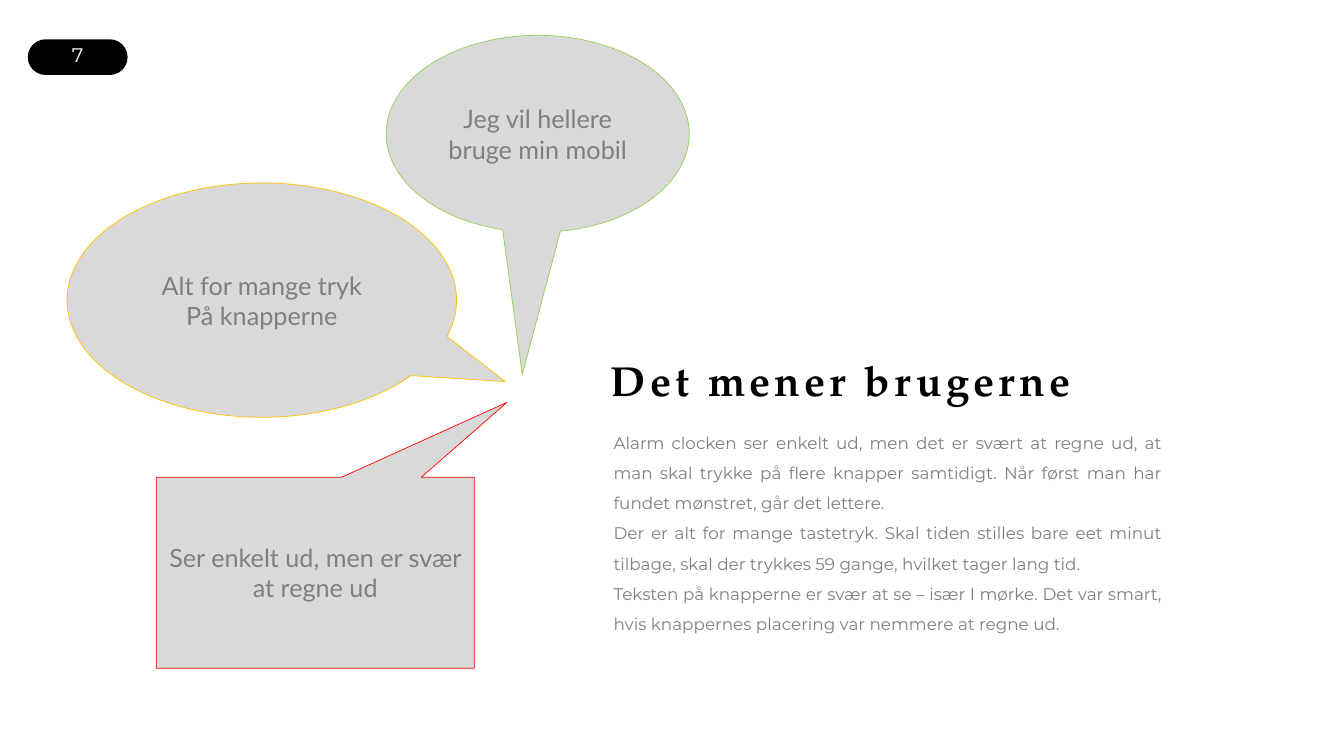
from pptx import Presentation
from pptx.dml.color import RGBColor
from pptx.enum.shapes import MSO_SHAPE as Preset
from pptx.enum.text import MSO_ANCHOR as Anchor, MSO_AUTO_SIZE as AutoSize, PP_ALIGN as Align
from pptx.oxml.ns import qn
from pptx.util import Cm, Pt

BLACK = RGBColor(0x00, 0x00, 0x00)
WHITE = RGBColor(0xFF, 0xFF, 0xFF)
GREY_TEXT = RGBColor(0x7F, 0x7F, 0x7F)
GREY_FILL = RGBColor(0xD9, 0xD9, 0xD9)
AMBER = RGBColor(0xFF, 0xC0, 0x00)
RED = RGBColor(0xFF, 0x00, 0x00)
GREEN = RGBColor(0x92, 0xD0, 0x50)

HEADING_FONT = "TeX Gyre Pagella"
BODY_FONT = "Montserrat"
CALLOUT_FONT = "Lato"

TITLE = "Det mener brugerne"
BODY = [
    "Alarm clocken ser enkelt ud, men det er svært at regne ud, at man skal trykke på "
    "flere knapper samtidigt. Når først man har fundet mønstret, går det lettere.",
    "Der er alt for mange tastetryk. Skal tiden stilles bare eet minut tilbage, skal der "
    "trykkes 59 gange, hvilket tager lang tid.",
    "Teksten på knapperne er svær at se – især I mørke. Det var smart, hvis knappernes "
    "placering var nemmere at regne ud.",
]
CALLOUTS = [
    (Preset.OVAL_CALLOUT, (3.38, 9.22, 19.63, 11.81), (0.625, 0.348), AMBER,
     ["Alt for mange tryk", "På knapperne"]),
    (Preset.RECTANGULAR_CALLOUT, (7.87, 24.05, 16.03, 9.63), (0.603, -0.892), RED,
     ["Ser enkelt ud, men er svær at regne ud"]),
    (Preset.OVAL_CALLOUT, (19.46, 1.78, 15.27, 9.93), (-0.051, 1.222), GREEN,
     ["Jeg vil hellere bruge min mobil"]),
]


def place(shape, left, top, width, height):
    shape.left, shape.top = Cm(left), Cm(top)
    shape.width, shape.height = Cm(width), Cm(height)


def write(frame, texts, font, size, color, align, bold=False):
    runs = []
    for index, text in enumerate(texts):
        paragraph = frame.add_paragraph() if index else frame.paragraphs[0]
        paragraph.alignment = align
        run = paragraph.add_run()
        run.text = text
        run.font.name = font
        run.font.size = Pt(size)
        run.font.bold = bold
        run.font.color.rgb = color
        runs.append(run)
    return runs


def add_page_number(slide, box, number):
    left, top, width, height = box
    pill = slide.shapes.add_shape(Preset.ROUNDED_RECTANGLE, *map(Cm, box))
    pill.adjustments[0] = 0.5
    pill.shadow.inherit = False
    pill.fill.solid()
    pill.fill.fore_color.rgb = BLACK
    pill.line.fill.background()
    label_width = 2.84
    label = slide.shapes.add_textbox(
        Cm(left + (width - label_width) / 2), Cm(top - 0.05), Cm(label_width), Cm(height - 0.1))
    frame = label.text_frame
    frame.word_wrap = False
    frame.margin_left = frame.margin_right = Cm(0.5)
    frame.margin_top = frame.margin_bottom = Cm(0.25)
    write(frame, [number], BODY_FONT, 28, WHITE, Align.CENTER)


def add_article(slide, box):
    left, top, width, height = box
    title, body = slide.shapes.title, slide.placeholders[1]
    place(title, left, top, width, 2.82)
    place(body, left + 0.13, top + 3.43, width - 1.29, height - 3.43)
    for placeholder in (title, body):
        placeholder.text_frame.word_wrap = True
        placeholder.text_frame.auto_size = AutoSize.SHAPE_TO_FIT_TEXT
        placeholder.text_frame.vertical_anchor = Anchor.TOP
    heading = write(title.text_frame, [TITLE], HEADING_FONT, 60, BLACK, Align.LEFT, bold=True)[0]
    heading.font._element.set("spc", "600")
    write(body.text_frame, BODY, BODY_FONT, 24, GREY_TEXT, Align.JUSTIFY)
    for paragraph in body.text_frame.paragraphs:
        paragraph.line_spacing = 1.5
        paragraph.space_before = Pt(0)
        properties = paragraph._p.get_or_add_pPr()
        properties.set("marL", "0")
        properties.set("indent", "0")
        properties.append(properties.makeelement(qn("a:buNone"), {}))


def add_callout(slide, preset, box, tip, color, texts):
    callout = slide.shapes.add_shape(preset, *map(Cm, box))
    callout.adjustments[0], callout.adjustments[1] = tip
    callout.shadow.inherit = False
    callout.fill.solid()
    callout.fill.fore_color.rgb = GREY_FILL
    callout.line.color.rgb = color
    callout.line.width = Pt(1)
    frame = callout.text_frame
    frame.word_wrap = True
    frame.vertical_anchor = Anchor.MIDDLE
    write(frame, texts, CALLOUT_FONT, 36, GREY_TEXT, Align.CENTER)


def main():
    presentation = Presentation()
    presentation.slide_width, presentation.slide_height = Cm(67.72), Cm(38.1)
    slide = presentation.slides.add_slide(presentation.slide_layouts[1])
    add_page_number(slide, (1.4, 1.98, 5.03, 1.8), "7")
    add_article(slide, (30.53, 17.73, 29.41, 12.75))
    for callout in CALLOUTS:
        add_callout(slide, *callout)
    presentation.save("out.pptx")


if __name__ == "__main__":
    main()
